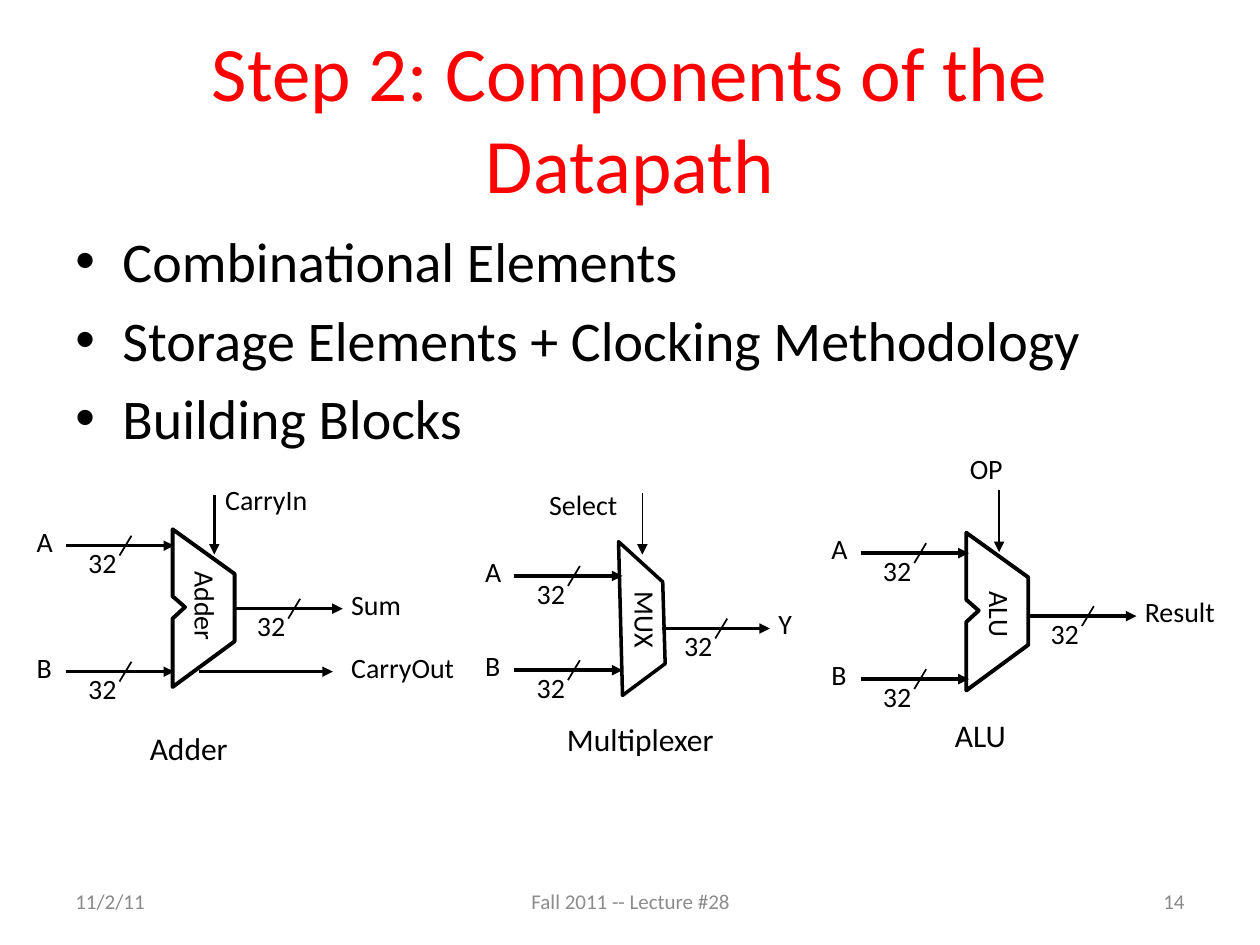
from lxml import etree
from pptx import Presentation
from pptx import util as u
from pptx.dml.color import RGBColor
from pptx.enum import shapes, text
from pptx.oxml import ns

Cm, Pt = u.Cm, u.Pt
COLORS = {"title": "FF0000", "ink": "000000", "date": "898989", "footer": "8C8C8C"}
LEFT, CENTER, RIGHT = text.PP_ALIGN.LEFT, text.PP_ALIGN.CENTER, text.PP_ALIGN.RIGHT

prs = Presentation()
prs.slide_width, prs.slide_height = Cm(25.4), Cm(19.05)
slide = prs.slides.add_slide(prs.slide_layouts[5])


def add_label(words, left, top, width, height=0.94, size=16, color="ink",
              align=LEFT, wrap=False, rotation=0):
    box = slide.shapes.add_textbox(Cm(left), Cm(top), Cm(width), Cm(height))
    box.rotation = rotation
    frame = box.text_frame
    frame.word_wrap = wrap
    for i, line in enumerate(words):
        para = frame.paragraphs[0] if i == 0 else frame.add_paragraph()
        para.alignment = align
        run = para.add_run()
        run.text = line
        run.font.size, run.font.name = Pt(size), "Calibri"
        run.font.color.rgb = RGBColor.from_string(COLORS[color])
    return frame


def add_wire(x1, y1, x2, y2, weight, arrow=True):
    wire = slide.shapes.add_connector(shapes.MSO_CONNECTOR.STRAIGHT,
                                      Cm(x1), Cm(y1), Cm(x2), Cm(y2))
    wire.line.color.rgb = RGBColor.from_string(COLORS["ink"])
    wire.line.width = Pt(weight)
    if arrow:
        etree.SubElement(wire.line._get_or_add_ln(), ns.qn("a:tailEnd"), type="triangle")
    etree.SubElement(wire._element.spPr, ns.qn("a:effectLst"))


# Title
title = slide.shapes.title
title.left, title.top, title.width, title.height = Cm(1.27), Cm(0.76), Cm(22.86), Cm(3.18)
title.text_frame.vertical_anchor = text.MSO_ANCHOR.MIDDLE
title.text_frame.word_wrap = True
heading = title.text_frame.paragraphs[0]
heading.alignment = CENTER
heading_run = heading.add_run()
heading_run.text = "Step 2: Components of the Datapath"
heading_run.font.size, heading_run.font.name = Pt(44), "Calibri"
heading_run.font.color.rgb = RGBColor.from_string(COLORS["title"])

# Bulleted topics
topics = add_label(
    ["Combinational Elements", "Storage Elements + Clocking Methodology", "Building Blocks"],
    1.27, 4.45, 22.86, 5.11, size=32, wrap=True)
for topic in topics.paragraphs:
    topic.space_before = Pt(6.4)
    props = topic._p.get_or_add_pPr()
    props.set("marL", str(Cm(0.95)))
    props.set("indent", str(-Cm(0.95)))
    etree.SubElement(props, ns.qn("a:buFont"), typeface="Arial")
    etree.SubElement(props, ns.qn("a:buChar"), char="•")

# Date, footer and slide number
for words, left, width, color, align in [
    ("11/2/11", 1.27, 5.92, "date", LEFT),
    ("Fall 2011 -- Lecture #28", 8.69, 8.05, "footer", CENTER),
    ("14", 18.21, 5.92, "date", RIGHT),
]:
    footer = add_label([words], left, 17.65, width, 1.02, 12, color, align, wrap=True)
    footer.vertical_anchor = text.MSO_ANCHOR.MIDDLE

# Outlines, relative to their top left corner
NOTCHED = [(0, 0), (0, 1.35), (0.25, 1.57), (0, 1.8), (0, 3.18), (1.25, 2.26), (1.25, 0.9)]
TAPERED = [(0, 0), (0.08, 3.1), (0.94, 2.46), (0.89, 0.81)]

# Buses are (label, label width, arrow tip x, y); the last one is the output
blocks = [
    {"outline": NOTCHED, "corner": (3.48, 10.67), "weight": 2.25,
     "name": ("Adder", 3.15, 11.79, 1.98), "caption": ("Adder", 2.77, 14.58, 2.11),
     "buses": [("A", 0.84, 3.51, 11), ("B", 0.82, 3.51, 13.54), ("Sum", 1.52, 6.91, 12.27)],
     "control": ("CarryIn", 4.29, 9.6, 2.18), "control_wire": (4.32, 9.98, 11.18, 2)},
    {"outline": TAPERED, "corner": (12.47, 10.92), "weight": 2,
     "name": ("MUX", 12.17, 12.04, 1.68), "caption": ("Multiplexer", 11.18, 14.4, 3.61),
     "buses": [("A", 0.84, 12.55, 11.61), ("B", 0.84, 12.55, 13.51), ("Y", 0.79, 15.52, 12.67)],
     "control": ("Select", 10.82, 9.7, 2.31), "control_wire": (12.95, 9.93, 11.18, 1)},
    {"outline": NOTCHED, "corner": (19.48, 10.74), "weight": 2.25,
     "name": ("ALU", 19.41, 11.96, 1.5), "caption": ("ALU", 19, 14.3, 1.55),
     "buses": [("A", 0.84, 19.53, 11.15), ("B", 0.84, 19.53, 13.69),
               ("Result", 1.98, 22.91, 12.42)],
     "control": ("OP", 19.3, 8.97, 1.68), "control_wire": (20.14, 9.88, 11.13, 1)},
]

for block in blocks:
    # 32-bit buses: arrow, slash, width and signal name
    for i, (signal, width, tip, y) in enumerate(block["buses"]):
        add_wire(tip - 2.18, y, tip, y, 2)
        add_wire(tip - 0.86, y - 0.2, tip - 1.1, y + 0.2, 1, arrow=False)
        add_label(["32"], tip - 1.98, y - 0.12, 1.09)
        add_label([signal], tip - (0.08 if i == 2 else 3.02), y - 0.56, width)

    # Control input from above
    x, top, bottom, weight = block["control_wire"]
    add_wire(x, top, x, bottom, weight)
    control, left, top, width = block["control"]
    add_label([control], left, top, width)

    # Body, name inside and caption below
    corner_x, corner_y = block["corner"]
    points = [(Cm(corner_x + dx), Cm(corner_y + dy)) for dx, dy in block["outline"]]
    builder = slide.shapes.build_freeform(*points[0])
    builder.add_line_segments(points[1:], close=True)
    body = builder.convert_to_shape()
    body.shadow.inherit = False
    body.fill.background()
    body.line.color.rgb = RGBColor.from_string(COLORS["ink"])
    body.line.width = Pt(block["weight"])
    name, left, top, width = block["name"]
    add_label([name], left, top, width, rotation=90)
    caption, left, top, width = block["caption"]
    add_label([caption], left, top, width, 1.02, size=18)

# Carry output of the adder
add_wire(4.01, 13.54, 6.71, 13.54, 2)
add_label(["CarryOut"], 6.83, 12.98, 2.62)

prs.save("out.pptx")
